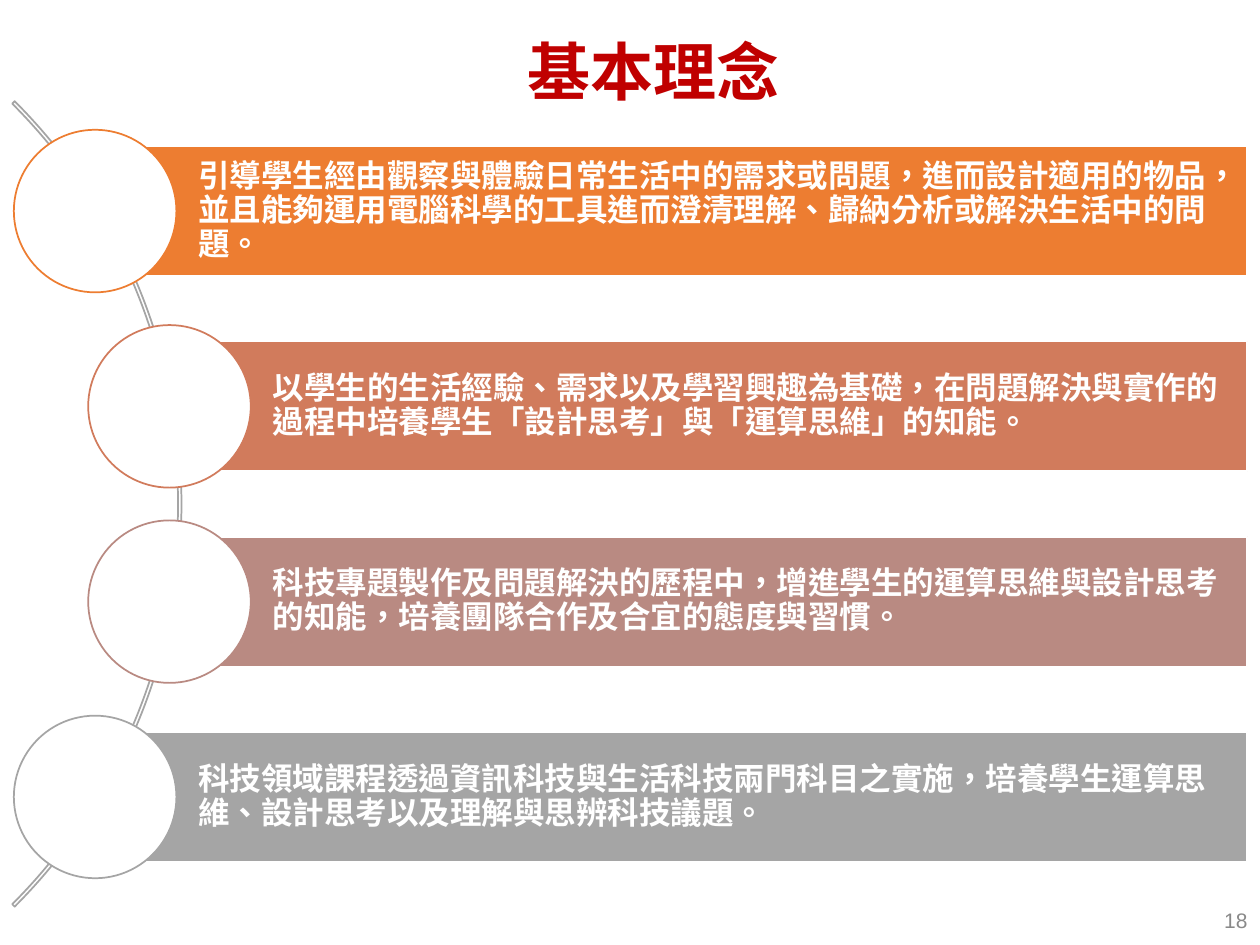
from lxml.etree import SubElement
from pptx import Presentation
from pptx.dml.color import RGBColor
from pptx.enum.shapes import MSO_SHAPE
from pptx.enum.text import MSO_ANCHOR, MSO_AUTO_SIZE, PP_ALIGN
from pptx.oxml.ns import qn
from pptx.util import Inches, Pt

WHITE = RGBColor(0xFF, 0xFF, 0xFF)
TITLE_RED = RGBColor(0xC0, 0x00, 0x00)
NUMBER_GRAY = RGBColor(0x89, 0x89, 0x89)
ORANGE = RGBColor(0xED, 0x7D, 0x31)
CORAL = RGBColor(0xD1, 0x7B, 0x5C)
ROSE = RGBColor(0xB9, 0x8A, 0x82)
GRAY = RGBColor(0xA5, 0xA5, 0xA5)
CJK_FONT = "Noto Sans CJK SC"

# Color, indent from the left of the list, wording
IDEAS = [
    (ORANGE, 0, "引導學生經由觀察與體驗日常生活中的需求或問題，進而設計適用的物品，"
                "並且能夠運用電腦科學的工具進而澄清理解、歸納分析或解決生活中的問題。"),
    (CORAL, 0.59, "以學生的生活經驗、需求以及學習興趣為基礎，在問題解決與實作的"
                  "過程中培養學生「設計思考」與「運算思維」的知能。"),
    (ROSE, 0.59, "科技專題製作及問題解決的歷程中，增進學生的運算思維與設計思考"
                 "的知能，培養團隊合作及合宜的態度與習慣。"),
    (GRAY, 0, "科技領域課程透過資訊科技與生活科技兩門科目之實施，培養學生運算思"
              "維、設計思考以及理解與思辨科技議題。"),
]


def set_attrs(obj, values):
    for name, value in values.items():
        setattr(obj, name, value)


def write(tf, text, size, color, font, bold, frame, para):
    set_attrs(tf, {"word_wrap": True, "auto_size": MSO_AUTO_SIZE.NONE, **frame})
    p = tf.paragraphs[0]
    set_attrs(p, para)
    r = p.add_run()
    r.text = text
    set_attrs(r.font, {"name": font, "size": Pt(size), "bold": bold})
    r.font.color.rgb = color
    # East Asian typeface and language
    if font == CJK_FONT:
        rPr = r._r.get_or_add_rPr()
        rPr.set("lang", "zh-TW")
        SubElement(rPr, qn("a:ea")).set("typeface", font)


def add_outlined(s, kind, box, fill, line):
    sp = s.shapes.add_shape(kind, *map(Inches, box))
    sp.shadow.inherit = False
    if fill is None:
        sp.fill.background()
    else:
        sp.fill.solid()
        sp.fill.fore_color.rgb = fill
    sp.line.color.rgb = line
    sp.line.width = Pt(1)
    return sp


def add_title(s, left, top, width, height):
    title = s.shapes.title
    set_attrs(title, {"left": Inches(left), "top": Inches(top),
                      "width": Inches(width), "height": Inches(height)})
    write(title.text_frame, "基本理念", 36, TITLE_RED, CJK_FONT, True,
          {"vertical_anchor": MSO_ANCHOR.TOP},
          {"alignment": PP_ALIGN.CENTER, "line_spacing": 0.9})


def add_idea(s, left, top, right, color, text):
    """Bar with a circle over its left end."""
    circle, bar = 1.29, 1.03
    bar_left = left + circle / 2
    sp = add_outlined(s, MSO_SHAPE.RECTANGLE,
                      (bar_left, top + (circle - bar) / 2, right - bar_left, bar),
                      color, WHITE)
    write(sp.text_frame, text, 18, WHITE, CJK_FONT, True,
          {"vertical_anchor": MSO_ANCHOR.MIDDLE, "margin_left": Inches(0.82),
           "margin_right": Inches(0.1), "margin_top": Inches(0.05),
           "margin_bottom": Inches(0.05)},
          {"alignment": PP_ALIGN.LEFT, "line_spacing": 0.9, "space_after": Pt(6.3)})
    add_outlined(s, MSO_SHAPE.OVAL, (left, top, circle, circle), WHITE, color)


def add_idea_list(s, left, top, width):
    # Curve behind the circles
    arc = add_outlined(s, MSO_SHAPE.BLOCK_ARC,
                       (left - 7.71, top - 1.55, 9.04, 9.04), None, GRAY)
    for i, value in enumerate((189, 27, 0.003)):
        arc.adjustments[i] = value
    # Evenly spaced ideas
    pitch = 1.55
    for i, (color, indent, text) in enumerate(IDEAS):
        add_idea(s, left + indent, top + i * pitch, left + width, color, text)


def add_page_number(s, left, top, width, height):
    box = s.shapes.add_textbox(*map(Inches, (left, top, width, height)))
    write(box.text_frame, "18", 12, NUMBER_GRAY, "Arial", False,
          {"vertical_anchor": MSO_ANCHOR.MIDDLE}, {"alignment": PP_ALIGN.RIGHT})


def main():
    prs = Presentation()
    prs.slide_width, prs.slide_height = Inches(10), Inches(7.5)
    s = prs.slides.add_slide(prs.slide_layouts[5])
    add_page_number(s, 7.75, 7.1, 2.25, 0.4)
    add_idea_list(s, 0.11, 1.03, 9.79)
    add_title(s, 0.88, 0.28, 8.62, 0.7)
    prs.save("out.pptx")


if __name__ == "__main__":
    main()
